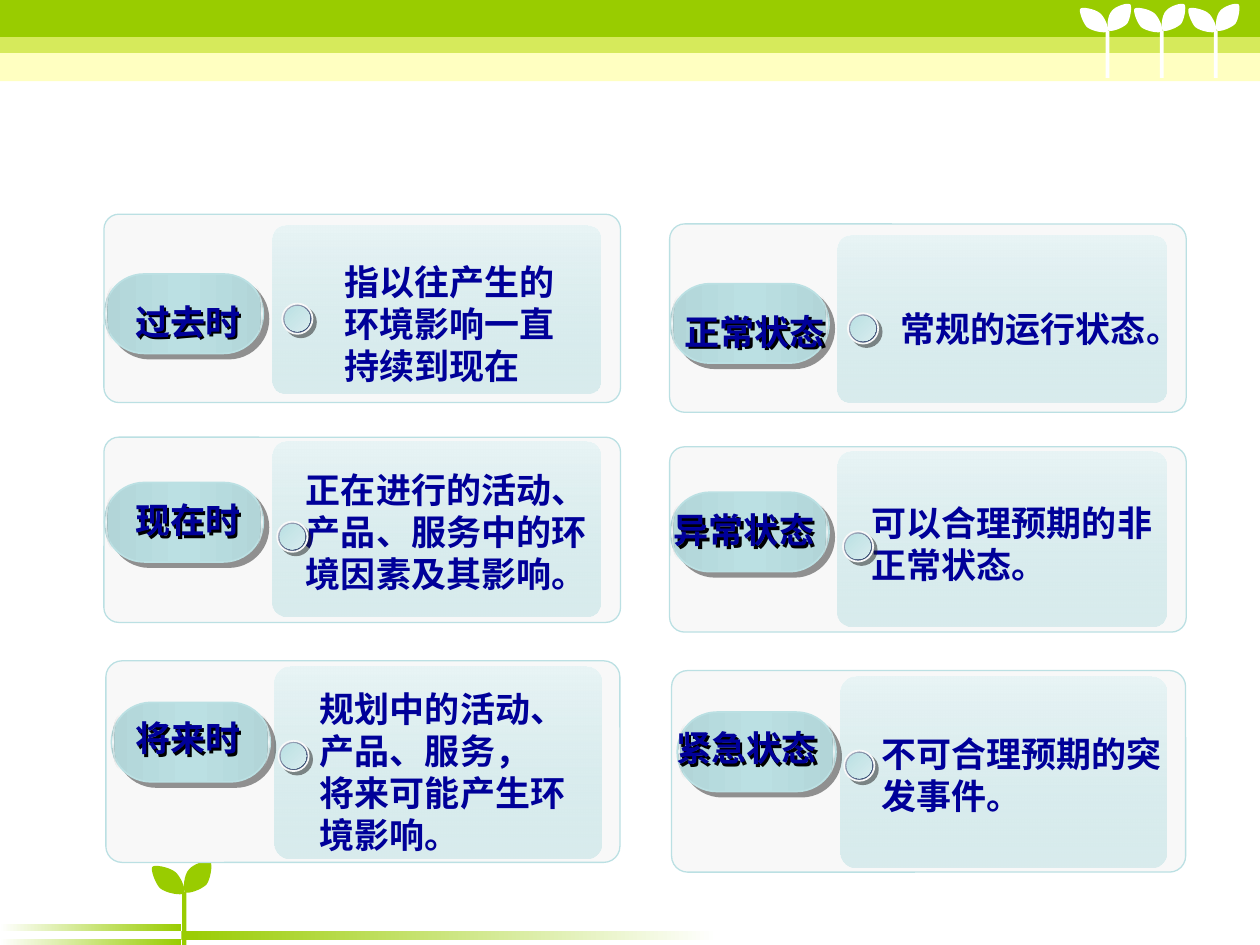
"""Build a slide of three time frames and three operating states on cards."""
import lxml.etree
import pptx
import pptx.dml.color
import pptx.enum.shapes
import pptx.enum.text
import pptx.oxml
import pptx.oxml.ns
import pptx.util

COLORS = {
    "green": "99CC00", "yellow": "FFFF99", "white": "FFFFFF", "card": "F8F8F8",
    "aqua": "BBE0E3", "aqua_dark": "B2D5D8", "aqua_pale": "E8F4F5", "aqua_soft": "D7ECEE",
    "steel": "C0C6D3", "navy": "223864", "gray": "B6B6B6", "text": "000099",
    "pill_shadow": "292929", "dot_shadow": "1C1C1C", "label_shadow": "000000",
}
FONT = "Noto Sans CJK SC"
RGB = pptx.dml.color.RGBColor.from_string
SHAPES = pptx.enum.shapes.MSO_SHAPE
CENTER = pptx.enum.text.PP_ALIGN.CENTER
qn = pptx.oxml.ns.qn
SHADOW = (
    '<a:outerShdw xmlns:a="http://schemas.openxmlformats.org/drawingml/2006/main" '
    'blurRad="0" dist="{}" dir="2700000" algn="ctr" rotWithShape="0">'
    '<a:srgbClr val="{}"><a:alpha val="{}"/></a:srgbClr></a:outerShdw>'
)

presentation = pptx.Presentation()
presentation.slide_width = pptx.util.Inches(10)
presentation.slide_height = pptx.util.Inches(7.5)
slide = presentation.slides.add_slide(presentation.slide_layouts[6])
COLUMN = presentation.slide_width / 100
ROW = presentation.slide_height / 75


def draw(kind, box, stops, angle=0, line=0, line_color="aqua", shadow=None, adjust=None):
    """Add a preset shape filled with (position, colour, opacity) stops."""
    left, top, width, height = box
    shape = slide.shapes.add_shape(
        kind, int(left * COLUMN), int(top * ROW), int(width * COLUMN), int(height * ROW))
    shape.shadow.inherit = False
    properties = shape._element.spPr
    if adjust is not None:
        shape.adjustments[0] = adjust
    if len(stops) == 1:
        shape.fill.solid()
        shape.fill.fore_color.rgb = RGB(COLORS[stops[0][1]])
        colors = [properties.find(".//" + qn("a:srgbClr"))]
    else:
        shape.fill.gradient()
        gradient = properties.find(qn("a:gradFill"))
        gradient.find(qn("a:lin")).set("ang", str(angle * 60000))
        stop_list = gradient.find(qn("a:gsLst"))
        for old_stop in list(stop_list):
            stop_list.remove(old_stop)
        colors = []
        for position, name, opacity in stops:
            stop = lxml.etree.SubElement(stop_list, qn("a:gs"), pos=str(position * 1000))
            colors.append(lxml.etree.SubElement(stop, qn("a:srgbClr"), val=COLORS[name]))
    for color, (position, name, opacity) in zip(colors, stops):
        if opacity < 100:
            lxml.etree.SubElement(color, qn("a:alpha"), val=str(opacity * 1000))
    if line:
        shape.line.color.rgb = RGB(COLORS[line_color])
        shape.line.width = pptx.util.Pt(line)
    else:
        shape.line.fill.background()
    if shadow:
        distance, name = shadow
        effects = properties.find(qn("a:effectLst"))
        effects.append(pptx.oxml.parse_xml(
            SHADOW.format(int(pptx.util.Pt(distance)), COLORS[name], 50000)))
    return shape


def write(text, box, label=False):
    """Add a bold text box; labels are centred and shadowed."""
    left, top, width, height = box
    shape = slide.shapes.add_textbox(
        int(left * COLUMN), int(top * ROW), int(width * COLUMN), int(height * ROW))
    shape.text_frame.word_wrap = True
    shape.text_frame.auto_size = pptx.enum.text.MSO_AUTO_SIZE.SHAPE_TO_FIT_TEXT
    shape.text_frame.text = text
    if label:
        shape.shadow.inherit = False
        effects = shape._element.spPr.find(qn("a:effectLst"))
        effects.append(pptx.oxml.parse_xml(
            SHADOW.format(int(pptx.util.Pt(2)), COLORS["label_shadow"], 100000)))
    for paragraph in shape.text_frame.paragraphs:
        if label:
            paragraph.alignment = CENTER
        for run in paragraph.runs:
            run.font.size = pptx.util.Pt(20)
            run.font.bold = True
            run.font.name = FONT
            run.font.color.rgb = RGB(COLORS["text"])
            lxml.etree.SubElement(run._r.get_or_add_rPr(), qn("a:ea"), typeface=FONT)


FADE = [(0, "white", 100), (100, "green", 100)]
LEAVES = [
    [(0, 0), (0.2, -0.3), (-0.3, -1.4), (-0.7, -1.7), (-1.2, -2.1), (-2.4, -2.3),
     (-2.5, -2.1), (-2.7, -2), (-2.3, -0.8), (-1.9, -0.4), (-1.4, 0), (-0.2, 0.2), (0, 0)],
    [(0.1, -0.1), (0.3, 0.1), (1.4, -0.3), (1.8, -0.7), (2.1, -1.1), (2.3, -2.3),
     (2.1, -2.5), (1.8, -2.7), (0.7, -2.3), (0.4, -1.9), (0, -1.5), (-0.1, -0.3), (0.1, -0.1)],
]
SPROUTS = [(14.6, 70.9, 1, "green")] + [(87.9 + 4.3 * i, 2.5, 0.86, "white") for i in range(3)]

draw(SHAPES.RECTANGLE, (0, 74.5, 14.4, 0.5), FADE)
draw(SHAPES.RECTANGLE, (0, 73.3, 14.4, 0.6), FADE)
draw(SHAPES.RECTANGLE, (14.4, 73.9, 42.5, 0.7), [(0, "green", 100), (100, "white", 100)])
draw(SHAPES.RECTANGLE, (0, 0, 100, 4.2), [(0, "green", 100)])
draw(SHAPES.RECTANGLE, (0, 2.95, 100, 3.5), [(0, "yellow", 60)])
for base_x, base_y, scale, name in SPROUTS:
    for leaf in LEAVES:
        points = [(int((base_x + scale * x) * COLUMN), int((base_y + scale * y) * ROW))
                  for x, y in leaf]
        builder = slide.shapes.build_freeform(*points[0])
        builder.add_line_segments(points[1:])
        shape = builder.convert_to_shape()
        segments = list(shape._element.iter(qn("a:lnTo")))[:12]
        for start in range(0, 12, 3):
            curve = lxml.etree.Element(qn("a:cubicBezTo"))
            segments[start].addprevious(curve)
            for segment in segments[start:start + 3]:
                curve.append(segment[0])
                segment.getparent().remove(segment)
        shape.shadow.inherit = False
        shape.fill.solid()
        shape.fill.fore_color.rgb = RGB(COLORS[name])
        shape.line.fill.background()
    draw(SHAPES.RECTANGLE, (base_x - 0.15, base_y - 0.1, 0.35 * scale, 4.4 * scale),
         [(0, name, 100)])

master_tree = presentation.slide_master.shapes._spTree
for shape in list(slide.shapes):
    shape._element.nvSpPr.cNvPr.set("id", str(shape.shape_id + 100))
    master_tree.append(shape._element)

PANEL = [(0, "aqua_pale", 100), (100, "aqua", 50)]
PILL = [(0, "aqua_dark", 100), (50, "aqua", 100), (100, "aqua_dark", 100)]
SHINE = [(0, "gray", 0), (50, "white", 84), (100, "gray", 0)]
RING = [(0, "steel", 100), (100, "navy", 100)]
DOT = [(0, "aqua", 100), (100, "aqua_soft", 100)]
CARD_ROWS = [
    ((8.25, 17, 41, 14.95), (21.6, 17.9, 26.05, 13.3), (8.3, 21.75), (22.4, 24.1)),
    ((8.25, 34.7, 41, 14.7), (21.6, 35.05, 26.05, 13.9), (8.3, 38.3), (22, 41.4)),
    ((8.4, 52.45, 40.8, 16), (21.8, 52.9, 25.9, 15.2), (8.85, 55.75), (22.1, 58.8)),
]
CARD_COLUMNS = [
    (0, 0, [
        ("过去时", (9, 23.35, 11.8, 4.3),
         "指以往产生的环境影响一直持续到现在", (26.35, 20.2, 21.2, 11)),
        ("现在时", (9, 39.1, 11.8, 4.3),
         "正在进行的活动、产品、服务中的环境因素及其影响。", (23.3, 36.7, 24.4, 11)),
        ("将来时", (9, 56.4, 11.8, 4.3),
         "规划中的活动、\n产品、服务，\n将来可能产生环\n境影响。", (24.4, 54.05, 27.6, 14.3)),
    ]),
    (44.9, 0.77, [
        ("正常状态", (52.4, 24.15, 15, 4.3),
         "常规的运行状态。", (70.5, 23.9, 22, 9.3)),
        ("异常状态", (51.95, 39.9, 14.2, 4.3),
         "可以合理预期的非正常状态。", (68.2, 39.3, 24.4, 7.7)),
        ("紧急状态", (52.15, 57.2, 14.2, 4.3),
         "不可合理预期的突\n发事件。", (68.95, 57.65, 27.6, 7.7)),
    ]),
]
for shift_x, shift_y, entries in CARD_COLUMNS:
    for (card, panel, pill, dot), (label, label_box, body, body_box) in zip(CARD_ROWS, entries):
        (card_x, card_y), (panel_x, panel_y), (pill_x, pill_y), (dot_x, dot_y) = [
            (item[0] + shift_x, item[1] + shift_y) for item in (card, panel, pill, dot)]
        draw(SHAPES.ROUNDED_RECTANGLE, (card_x, card_y, *card[2:]), [(0, "card", 100)],
             line=0.75, adjust=0.08)
        draw(SHAPES.ROUNDED_RECTANGLE, (panel_x, panel_y, *panel[2:]), PANEL, 90, adjust=0.08)
        draw(SHAPES.ROUNDED_RECTANGLE, (pill_x, pill_y, 12.6, 6.3), PILL, line=1,
             shadow=(4.2, "pill_shadow"), adjust=0.5)
        for moon_x, turn in ((11.9, 180), (0.1, 0)):
            moon = draw(SHAPES.MOON, (pill_x + moon_x, pill_y + 0.95, 0.6, 4.4), SHINE, 90,
                        adjust=0.22)
            moon.rotation = turn
        write(label, label_box, label=True)
        write(body, body_box)
        draw(SHAPES.OVAL, (dot_x, dot_y, 2.4, 2.4), RING, 45, line=1, line_color="card",
             shadow=(2.8, "dot_shadow"))
        draw(SHAPES.OVAL, (dot_x + 0.2, dot_y + 0.2, 2, 2), DOT, 45)

presentation.save("out.pptx")
